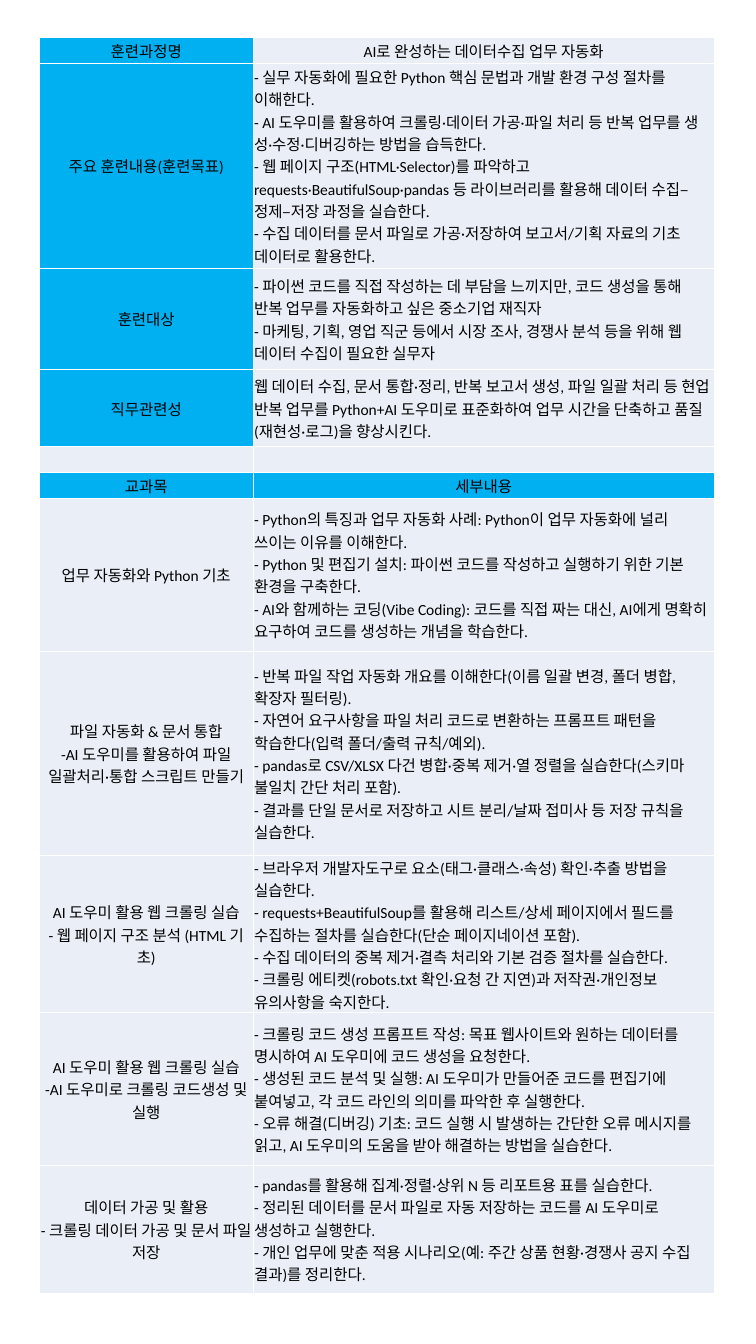
from lxml import etree
from copy import deepcopy
from pptx import Presentation
from pptx.dml.color import RGBColor
from pptx.enum.text import MSO_ANCHOR, PP_ALIGN
from pptx.oxml.ns import qn
from pptx.util import Inches, Pt

CENTER, LEFT = PP_ALIGN.CENTER, PP_ALIGN.LEFT
MIDDLE = MSO_ANCHOR.MIDDLE
BLANK_LAYOUT = 6

COLORS = {"header": "00B0F0", "body": "EAEFF7", "border": "FFFFFF", "text": "000000"}
FONT = {"name": "Calibri", "size": Pt(16), "bold": False}
CELL = {
    "margin_left": Inches(0.01),
    "margin_right": Inches(0.01),
    "margin_top": Inches(0.01),
    "margin_bottom": 0,
    "vertical_anchor": MIDDLE,
}
COLUMN_WIDTHS = (3.07, 6.6)

# Course overview: row height, label, lines of content
OVERVIEW = [
    (0.37, "훈련과정명", ["AI로 완성하는 데이터수집 업무 자동화"]),
    (2.93, "주요 훈련내용(훈련목표)", [
        "- 실무 자동화에 필요한 Python 핵심 문법과 개발 환경 구성 절차를 이해한다.",
        "- AI 도우미를 활용하여 크롤링·데이터 가공·파일 처리 등 반복 업무를 생성·수정·디버깅하는 방법을 습득한다.",
        "- 웹 페이지 구조(HTML·Selector)를 파악하고 requests·BeautifulSoup·pandas 등 라이브러리를 "
        "활용해 데이터 수집–정제–저장 과정을 실습한다.",
        "- 수집 데이터를 문서 파일로 가공·저장하여 보고서/기획 자료의 기초 데이터로 활용한다.",
    ]),
    (1.46, "훈련대상", [
        "- 파이썬 코드를 직접 작성하는 데 부담을 느끼지만, 코드 생성을 통해 반복 업무를 자동화하고 싶은 중소기업 재직자",
        "- 마케팅, 기획, 영업 직군 등에서 시장 조사, 경쟁사 분석 등을 위해 웹 데이터 수집이 필요한 실무자",
    ]),
    (1.1, "직무관련성", [
        "웹 데이터 수집, 문서 통합·정리, 반복 보고서 생성, 파일 일괄 처리 등 현업 반복 업무를 "
        "Python+AI 도우미로 표준화하여 업무 시간을 단축하고 품질(재현성·로그)을 향상시킨다.",
    ]),
]

# Curriculum: row height, subject, lines of detail
CURRICULUM = [
    (2.19, "업무 자동화와 Python 기초", [
        "- Python의 특징과 업무 자동화 사례: Python이 업무 자동화에 널리 쓰이는 이유를 이해한다.",
        "- Python 및 편집기 설치: 파이썬 코드를 작성하고 실행하기 위한 기본 환경을 구축한다.",
        "- AI와 함께하는 코딩(Vibe Coding): 코드를 직접 짜는 대신, AI에게 명확히 요구하여 코드를 생성하는 개념을 학습한다.",
    ]),
    (2.93, "파일 자동화 & 문서 통합\n-AI 도우미를 활용하여 파일 일괄처리·통합 스크립트 만들기", [
        "- 반복 파일 작업 자동화 개요를 이해한다(이름 일괄 변경, 폴더 병합, 확장자 필터링).",
        "- 자연어 요구사항을 파일 처리 코드로 변환하는 프롬프트 패턴을 학습한다(입력 폴더/출력 규칙/예외).",
        "- pandas로 CSV/XLSX 다건 병합·중복 제거·열 정렬을 실습한다(스키마 불일치 간단 처리 포함).",
        "- 결과를 단일 문서로 저장하고 시트 분리/날짜 접미사 등 저장 규칙을 실습한다.",
    ]),
    (2.19, "AI 도우미 활용 웹 크롤링 실습\n- 웹 페이지 구조 분석 (HTML 기초)", [
        "- 브라우저 개발자도구로 요소(태그·클래스·속성) 확인·추출 방법을 실습한다.",
        "- requests+BeautifulSoup를 활용해 리스트/상세 페이지에서 필드를 수집하는 절차를 실습한다(단순 페이지네이션 포함).",
        "- 수집 데이터의 중복 제거·결측 처리와 기본 검증 절차를 실습한다.",
        "- 크롤링 에티켓(robots.txt 확인·요청 간 지연)과 저작권·개인정보 유의사항을 숙지한다.",
    ]),
    (2.19, "AI 도우미 활용 웹 크롤링 실습\n-AI 도우미로 크롤링 코드생성 및 실행", [
        "- 크롤링 코드 생성 프롬프트 작성: 목표 웹사이트와 원하는 데이터를 명시하여 AI 도우미에 코드 생성을 요청한다.",
        "- 생성된 코드 분석 및 실행: AI 도우미가 만들어준 코드를 편집기에 붙여넣고, 각 코드 라인의 의미를 파악한 후 실행한다.",
        "- 오류 해결(디버깅) 기초: 코드 실행 시 발생하는 간단한 오류 메시지를 읽고, AI 도우미의 도움을 받아 해결하는 방법을 실습한다.",
    ]),
    (1.83, "데이터 가공 및 활용\n- 크롤링 데이터 가공 및 문서 파일 저장", [
        "- pandas를 활용해 집계·정렬·상위 N 등 리포트용 표를 실습한다.",
        "- 정리된 데이터를 문서 파일로 자동 저장하는 코드를 AI 도우미로 생성하고 실행한다.",
        "- 개인 업무에 맞춘 적용 시나리오(예: 주간 상품 현황·경쟁사 공지 수집 결과)를 정리한다.",
    ]),
]


def plan_rows():
    """List (height, texts, fills, alignments) for every table row."""
    rows = []
    for index, (height, label, lines) in enumerate(OVERVIEW):
        content_align = CENTER if index == 0 else LEFT
        rows.append((height, (label, "\n".join(lines)), ("header", "body"), (CENTER, content_align)))
    rows.append((0.37, ("", ""), ("body", "body"), (LEFT, LEFT)))
    rows.append((0.37, ("교과목", "세부내용"), ("header", "header"), (CENTER, CENTER)))
    for height, subject, lines in CURRICULUM:
        rows.append((height, (subject, "\n".join(lines)), ("body", "body"), (CENTER, LEFT)))
    return rows


def set_borders(cell):
    properties = cell._tc.get_or_add_tcPr()
    for side in ("a:lnL", "a:lnR", "a:lnT", "a:lnB"):
        border = etree.SubElement(properties, qn(side), w=str(Pt(1)))
        fill = etree.SubElement(border, qn("a:solidFill"))
        etree.SubElement(fill, qn("a:srgbClr"), val=COLORS["border"])


def write_text(cell, text, align):
    paragraph = cell.text_frame.paragraphs[0]
    paragraph.text = text
    paragraph.alignment = align
    for run in paragraph.runs:
        for key, value in FONT.items():
            setattr(run.font, key, value)
        run.font.color.rgb = RGBColor.from_string(COLORS["text"])
    # Line breaks take the text size too
    for line_break in paragraph._p.findall(qn("a:br")):
        line_break.append(deepcopy(paragraph.runs[0].font._element))


def fill_cell(cell, text, fill, align):
    set_borders(cell)
    for key, value in CELL.items():
        setattr(cell, key, value)
    cell.fill.solid()
    cell.fill.fore_color.rgb = RGBColor.from_string(COLORS[fill])
    if text:
        write_text(cell, text, align)


def add_course_table(slide):
    rows = plan_rows()
    height = sum(row[0] for row in rows)
    course = slide.shapes.add_table(
        len(rows), len(COLUMN_WIDTHS),
        Inches(0.56), Inches(0.54), Inches(sum(COLUMN_WIDTHS)), Inches(height),
    ).table
    course.first_row = course.horz_banding = False
    for column, width in zip(course.columns, COLUMN_WIDTHS):
        column.width = Inches(width)
    for row, (row_height, *contents) in zip(course.rows, rows):
        row.height = Inches(row_height)
        for cell, text, fill, align in zip(row.cells, *contents):
            fill_cell(cell, text, fill, align)


def main():
    prs = Presentation()
    prs.slide_width, prs.slide_height = Inches(10.83), Inches(19.26)
    slide = prs.slides.add_slide(prs.slide_layouts[BLANK_LAYOUT])
    add_course_table(slide)
    prs.save("out.pptx")


if __name__ == "__main__":
    main()
